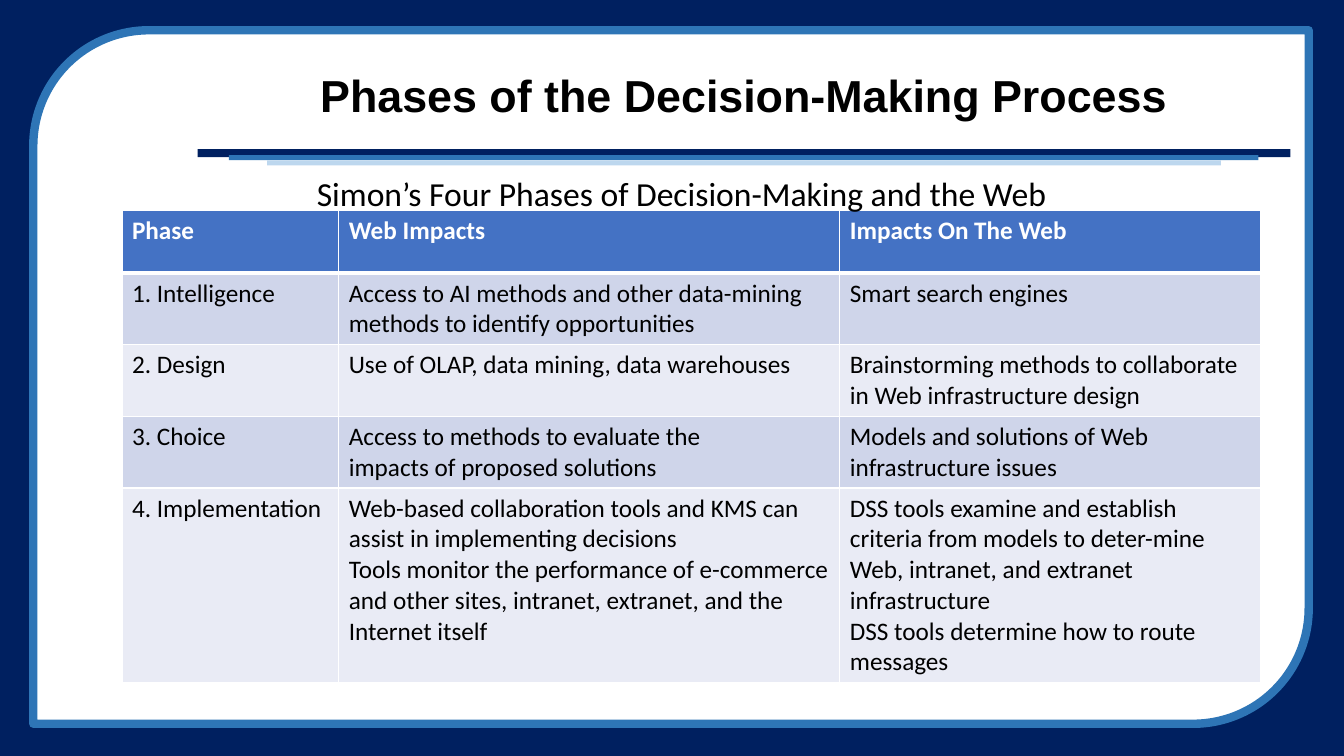
from dataclasses import dataclass

from lxml.etree import SubElement
from pptx import Presentation
from pptx.dml.color import RGBColor
from pptx.enum.shapes import MSO_SHAPE
from pptx.enum.text import MSO_ANCHOR, PP_ALIGN
from pptx.oxml.ns import qn
from pptx.util import Inches, Pt


@dataclass(frozen=True)
class Theme:
    navy: str = "002060"
    blue: str = "2E75B6"
    pale_blue: str = "BDD7EE"
    white: str = "FFFFFF"
    black: str = "000000"
    header: str = "4472C4"
    bands: tuple = ("CFD5EA", "E9EBF5")
    title_font: str = "Arial"
    body_font: str = "Calibri"
    title_size: int = 32
    caption_size: int = 24
    table_size: int = 18


THEME = Theme()

COLUMN_WIDTHS = (2.15, 4.97, 4.17)
ROW_HEIGHTS = (0.62, 0.67, 0.62, 0.62, 0.62)
PHASES = (
    ("Phase", "Web Impacts", "Impacts On The Web"),
    ("1. Intelligence",
     "Access to AI methods and other data-mining methods to identify opportunities",
     "Smart search engines"),
    ("2. Design",
     "Use of OLAP, data mining, data warehouses",
     "Brainstorming methods to collaborate in Web infrastructure design"),
    ("3. Choice",
     "Access to methods to evaluate the\nimpacts of proposed solutions",
     "Models and solutions of Web infrastructure issues"),
    ("4. Implementation",
     "Web-based collaboration tools and KMS can assist in implementing decisions\n"
     "Tools monitor the performance of e-commerce and other sites, intranet, "
     "extranet, and the Internet itself",
     "DSS tools examine and establish criteria from models to deter-mine Web, "
     "intranet, and extranet infrastructure\n"
     "DSS tools determine how to route messages"),
)


def color(value):
    return RGBColor.from_string(value)


def write_text(frame, text, *, size, font=THEME.body_font, ink=THEME.black,
               bold=False, align=PP_ALIGN.LEFT, line_spacing=None):
    """Fill a text frame, one paragraph per line of text."""
    frame.text = text
    frame.word_wrap = True
    for para in frame.paragraphs:
        para.alignment = align
        para.line_spacing = line_spacing
        for span in para.runs:
            span.font.name = font
            span.font.size = Pt(size)
            span.font.bold = bold
            span.font.color.rgb = color(ink)


def add_panel(shapes, kind, left, top, width, height, fill, line=None, line_width=0):
    panel = shapes.add_shape(kind, Inches(left), Inches(top), Inches(width), Inches(height))
    panel.shadow.inherit = False
    panel.fill.solid()
    panel.fill.fore_color.rgb = color(fill)
    if line:
        panel.line.color.rgb = color(line)
        panel.line.width = Pt(line_width)
    else:
        panel.line.fill.background()
    return panel


def add_backdrop(page):
    add_panel(page.shapes, MSO_SHAPE.RECTANGLE, 0, 0, 13.33, 7.5, THEME.navy)
    frame = add_panel(page.shapes, MSO_SHAPE.ROUND_2_DIAG_RECTANGLE, 0.33, 0.3, 12.65, 6.88,
                      THEME.white, line=THEME.blue, line_width=6)
    frame.rotation = 180
    # Stepped rule under the title
    rule = page.shapes.add_group_shape()
    for left, top, width, height, fill in (
        (1.96, 1.48, 10.84, 0.08, THEME.navy),
        (2.27, 1.54, 10.21, 0.05, THEME.blue),
        (2.65, 1.59, 9.46, 0.05, THEME.pale_blue),
    ):
        add_panel(rule.shapes, MSO_SHAPE.RECTANGLE, left, top, width, height, fill)


def place_title(page, text):
    title = page.shapes.title
    title.left, title.top = Inches(1.96), Inches(0.49)
    title.width, title.height = Inches(10.84), Inches(0.97)
    title.text_frame.vertical_anchor = MSO_ANCHOR.MIDDLE
    write_text(title.text_frame, text, size=THEME.title_size, font=THEME.title_font,
               bold=True, align=PP_ALIGN.CENTER, line_spacing=0.9)
    # Bring the title in front of the backdrop
    page.shapes.element.append(title.element)


def set_borders(cell, bottom_width):
    properties = cell._tc.get_or_add_tcPr()
    for side, width in (("L", 1), ("R", 1), ("T", 1), ("B", bottom_width)):
        line = SubElement(properties, qn(f"a:ln{side}"), w=str(Pt(width)))
        fill = SubElement(line, qn("a:solidFill"))
        SubElement(fill, qn("a:srgbClr"), val=THEME.white)


def add_phase_table(page):
    table = page.shapes.add_table(
        len(PHASES), len(COLUMN_WIDTHS), Inches(1.21), Inches(2.09),
        Inches(sum(COLUMN_WIDTHS)), Inches(sum(ROW_HEIGHTS))).table
    for column, width in zip(table.columns, COLUMN_WIDTHS):
        column.width = Inches(width)
    for row, height in zip(table.rows, ROW_HEIGHTS):
        row.height = Inches(height)
    for row_index, texts in enumerate(PHASES):
        is_header = row_index == 0
        for column_index, text in enumerate(texts):
            cell = table.cell(row_index, column_index)
            set_borders(cell, bottom_width=3 if is_header else 1)
            cell.fill.solid()
            cell.fill.fore_color.rgb = color(
                THEME.header if is_header else THEME.bands[(row_index - 1) % 2])
            write_text(cell.text_frame, text, size=THEME.table_size, bold=is_header,
                       ink=THEME.white if is_header else THEME.black)


def add_caption(page, text):
    box = page.shapes.add_textbox(Inches(1.03), Inches(1.67), Inches(11.46), Inches(0.5))
    write_text(box.text_frame, text, size=THEME.caption_size, align=PP_ALIGN.CENTER)


def main():
    deck = Presentation()
    deck.slide_width, deck.slide_height = Inches(13.33), Inches(7.5)
    page = deck.slides.add_slide(deck.slide_layouts[5])
    add_backdrop(page)
    place_title(page, "Phases of the Decision-Making Process")
    add_phase_table(page)
    add_caption(page, "Simon’s Four Phases of Decision-Making and the Web")
    deck.save("out.pptx")


if __name__ == "__main__":
    main()
